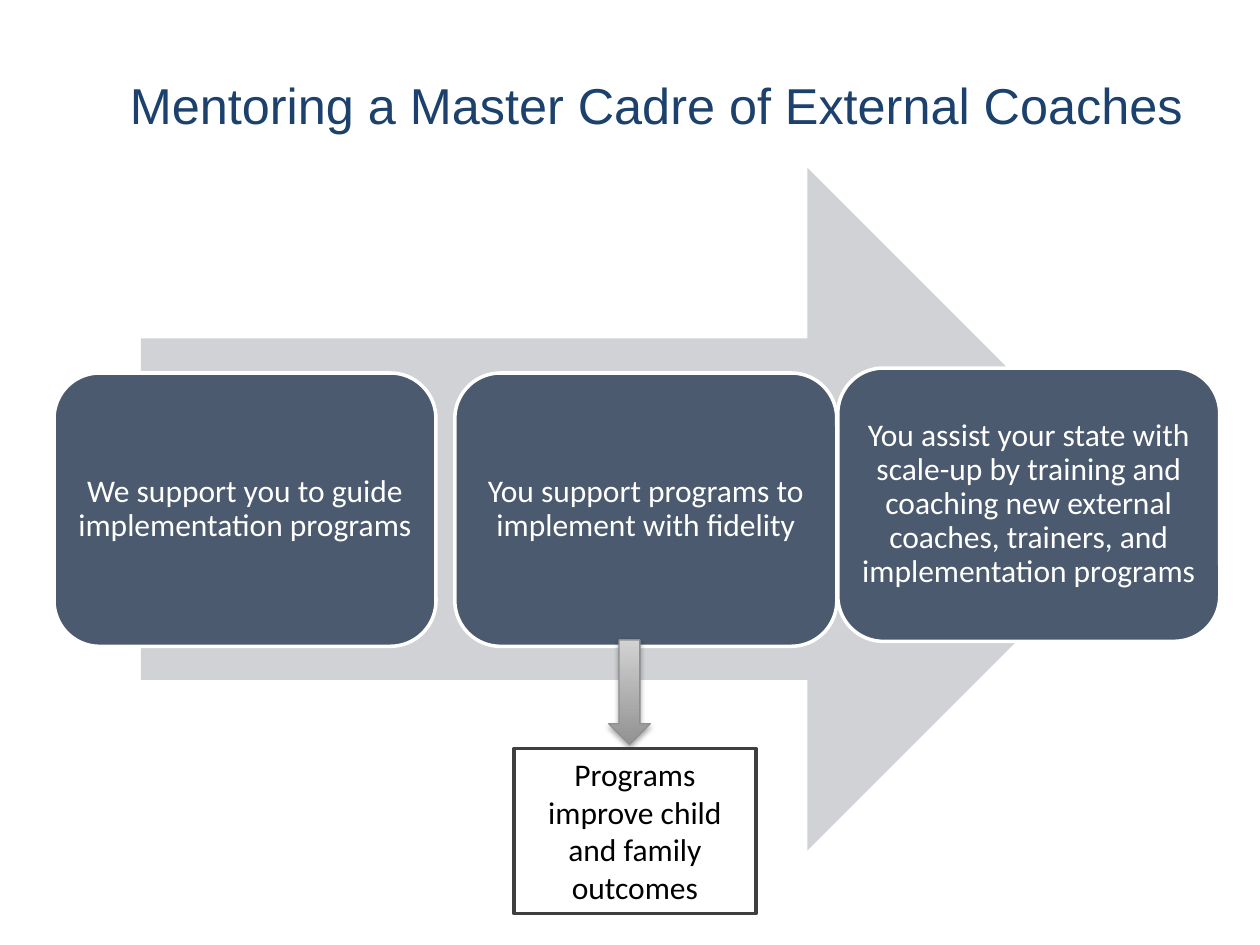
from lxml.etree import SubElement
from pptx import Presentation
from pptx.dml.color import RGBColor
from pptx.enum.shapes import MSO_SHAPE
from pptx.enum.text import MSO_ANCHOR, PP_ALIGN
from pptx.oxml.ns import qn
from pptx.util import Cm, Pt

NAVY = RGBColor(0x1B, 0x41, 0x6C)
SLATE = RGBColor(0x4B, 0x5A, 0x6F)
PALE_GRAY = RGBColor(0xD0, 0xD2, 0xD5)
LIGHT_GRAY = RGBColor(0xD2, 0xD2, 0xD2)
MID_GRAY = RGBColor(0x92, 0x92, 0x92)
EDGE_GRAY = RGBColor(0x8F, 0x8F, 0x8F)
DARK_GRAY = RGBColor(0x3F, 0x3F, 0x3F)
WHITE = RGBColor(0xFF, 0xFF, 0xFF)
BLACK = RGBColor(0, 0, 0)

STEP_WIDTH, STEP_HEIGHT = 7.7, 5.51
STEPS = [
    (1.09, 7.52, "We support you to guide implementation programs"),
    (9.17, 7.52, "You support programs to implement with fidelity"),
    (16.89, 7.42, "You assist your state with scale-up by training and coaching "
                  "new external coaches, trainers, and implementation programs"),
]


def add_plain_shape(slide, kind, left, top, width, height, fill=None):
    shape = slide.shapes.add_shape(kind, Cm(left), Cm(top), Cm(width), Cm(height))
    shape.shadow.inherit = False
    shape.line.fill.background()
    if fill is not None:
        shape.fill.solid()
        shape.fill.fore_color.rgb = fill
    return shape


def set_line(shape, color, width):
    shape.line.color.rgb = color
    shape.line.width = Pt(width)


def write_text(shape, text, color, size=18, font="Calibri"):
    """Fill the shape with one centred paragraph and return it."""
    shape.text_frame.word_wrap = True
    paragraph = shape.text_frame.paragraphs[0]
    paragraph.text = text
    paragraph.alignment = PP_ALIGN.CENTER
    paragraph.font.name = font
    paragraph.font.size = Pt(size)
    paragraph.font.color.rgb = color
    return paragraph


def add_title(slide, text):
    title = slide.shapes.add_textbox(Cm(1.07), Cm(1.27), Cm(24.33), Cm(1.9))
    write_text(title, text, NAVY, 28.8, "Arial")
    title.text_frame.margin_top = Cm(0.23)


def add_step(slide, left, top, text):
    step = add_plain_shape(slide, MSO_SHAPE.ROUNDED_RECTANGLE, left, top,
                           STEP_WIDTH, STEP_HEIGHT, SLATE)
    set_line(step, WHITE, 2)
    frame = step.text_frame
    frame.vertical_anchor = MSO_ANCHOR.MIDDLE
    frame.margin_left = frame.margin_right = Cm(0.18)
    frame.margin_top = frame.margin_bottom = Cm(0.18)
    write_text(step, text, WHITE).line_spacing = 0.9


def add_drop_shadow(shape):
    effects = shape._element.spPr.find(qn("a:effectLst"))
    shadow = SubElement(effects, qn("a:outerShdw"), blurRad=str(Pt(3.1)),
                        dist=str(Pt(1.8)), dir="5400000", rotWithShape="0")
    color = SubElement(shadow, qn("a:srgbClr"), val="000000")
    SubElement(color, qn("a:alpha"), val="35000")


def add_outcome_arrow(slide):
    arrow = add_plain_shape(slide, MSO_SHAPE.DOWN_ARROW, 12.27, 12.9, 0.84, 2.11)
    arrow.fill.gradient()
    arrow.fill.gradient_angle = 90
    for stop, color in zip(arrow.fill.gradient_stops, (MID_GRAY, LIGHT_GRAY)):
        stop.color.rgb = color
    set_line(arrow, EDGE_GRAY, 0.75)
    add_drop_shadow(arrow)


def add_outcome(slide, text):
    outcome = add_plain_shape(slide, MSO_SHAPE.RECTANGLE, 10.36, 15.09, 4.88, 3.33, WHITE)
    set_line(outcome, DARK_GRAY, 2)
    outcome.text_frame.vertical_anchor = MSO_ANCHOR.TOP
    write_text(outcome, text, BLACK)


def main():
    presentation = Presentation()
    presentation.slide_width = Cm(25.4)
    presentation.slide_height = Cm(19.05)
    slide = presentation.slides.add_slide(presentation.slide_layouts[6])

    add_title(slide, "Mentoring a Master Cadre of External Coaches")
    add_plain_shape(slide, MSO_SHAPE.RIGHT_ARROW, 2.84, 3.38, 20.32, 13.77, PALE_GRAY)
    for left, top, text in STEPS:
        add_step(slide, left, top, text)
    add_outcome_arrow(slide)
    add_outcome(slide, "Programs improve child and family outcomes")

    presentation.save("out.pptx")


if __name__ == "__main__":
    main()
